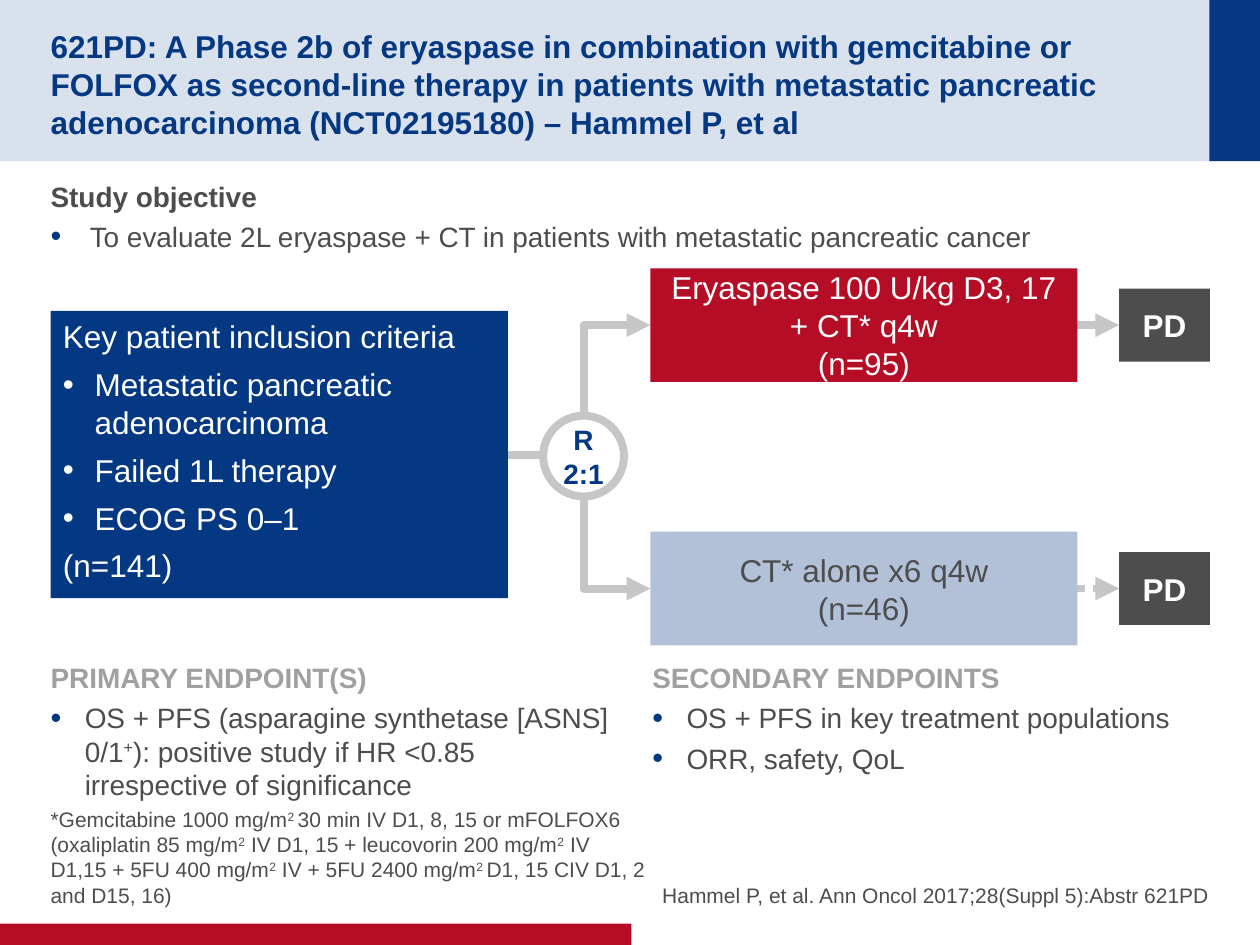
from dataclasses import dataclass

from lxml.etree import SubElement
from pptx import Presentation
from pptx.dml.color import RGBColor
from pptx.enum.dml import MSO_LINE
from pptx.enum.shapes import MSO_CONNECTOR as Connector, MSO_SHAPE as Shape
from pptx.enum.text import MSO_ANCHOR as Anchor, MSO_AUTO_SIZE as AutoSize, PP_ALIGN as Align
from pptx.oxml.ns import qn
from pptx.util import Cm, Pt


@dataclass(frozen=True)
class Theme:
    font: str = "Arial"
    navy: str = "043882"
    red: str = "B60D27"
    pale_blue: str = "B2C0D8"
    dark: str = "4D4D4D"
    heading: str = "A0A0A0"
    line: str = "C6C6C6"
    white: str = "FFFFFF"
    large: int = 18
    body: int = 16
    small: int = 12
    line_width: float = 4.5


@dataclass(frozen=True)
class Box:
    """A region in centimetres."""
    x: float
    y: float
    w: float
    h: float

    def lengths(self):
        return Cm(self.x), Cm(self.y), Cm(self.w), Cm(self.h)

    def inner(self, x, y, w, h):
        return Box(self.x + x, self.y + y, w, h)


THEME = Theme()
SLIDE = Box(0, 0, 25.4, 19.05)
MARGIN = 1.02
RIGHT_COLUMN = 12.9
CONTENT_WIDTH = 23.36


def set_frame(shape, insets=(0, 0, 0, 0), anchor=Anchor.TOP, wrap=True):
    frame = shape.text_frame
    frame.auto_size = AutoSize.NONE
    frame.word_wrap = wrap
    frame.vertical_anchor = anchor
    frame.margin_left, frame.margin_top, frame.margin_right, frame.margin_bottom = map(Cm, insets)
    return frame


def set_bullet(paragraph, indent, color):
    properties = paragraph._p.get_or_add_pPr()
    properties.set("marL", str(Cm(indent)))
    properties.set("indent", str(-Cm(indent)))
    if not indent:
        SubElement(properties, qn("a:buNone"))
        return
    if color:
        SubElement(SubElement(properties, qn("a:buClr")), qn("a:srgbClr"), val=color)
        SubElement(properties, qn("a:buSzPct"), val="110000")
    SubElement(properties, qn("a:buFont"), typeface=THEME.font)
    SubElement(properties, qn("a:buChar"), char="•")


def write(frame, text, size, color, bold=False, align=Align.LEFT, after=0, indent=0, bullet=None):
    """Add one paragraph; text between ^ marks is superscript."""
    paragraph = frame.paragraphs[0] if not frame.text else frame.add_paragraph()
    paragraph.alignment = align
    paragraph.space_before, paragraph.space_after = Pt(0), Pt(after)
    set_bullet(paragraph, indent, bullet)
    for number, part in enumerate(text.split("^")):
        run = paragraph.add_run()
        run.text = part
        font = run.font
        font.name, font.size, font.bold = THEME.font, Pt(size), bold
        font.color.rgb = RGBColor.from_string(color)
        if number % 2:
            run._r.get_or_add_rPr().set("baseline", "30000")


def add_block(slide, box, fill, kind=Shape.RECTANGLE):
    shape = slide.shapes.add_shape(kind, *box.lengths())
    shape.shadow.inherit = False
    shape.fill.solid()
    shape.fill.fore_color.rgb = RGBColor.from_string(fill)
    shape.line.fill.background()
    return shape


def add_label(slide, box, lines, fill, color, bold=False):
    frame = set_frame(add_block(slide, box, fill), (0.25, 0, 0.25, 0), Anchor.MIDDLE)
    for line in lines:
        write(frame, line, THEME.large, color, bold, Align.CENTER)


def style_connector(connector, arrow=True, dash=None):
    connector.line.color.rgb = RGBColor.from_string(THEME.line)
    connector.line.width = Pt(THEME.line_width)
    if dash:
        connector.line.dash_style = dash
    properties = connector._element.spPr
    if arrow:
        SubElement(properties.find(qn("a:ln")), qn("a:tailEnd"), type="triangle")
    SubElement(properties, qn("a:effectLst"))


def add_line(slide, x1, x2, y, **style):
    connector = slide.shapes.add_connector(Connector.STRAIGHT, Cm(x1), Cm(y), Cm(x2), Cm(y))
    style_connector(connector, **style)


def add_elbow(slide, x1, y1, x2, y2):
    """Go vertically from the start, then right to the end."""
    half_w, half_h = abs(y2 - y1) / 2, (x2 - x1) / 2
    x, y = (x1 + x2) / 2, (y1 + y2) / 2
    upward = y2 < y1
    if upward:
        half_h = -half_h
    connector = slide.shapes.add_connector(
        Connector.ELBOW, Cm(x + half_w), Cm(y - half_h), Cm(x - half_w), Cm(y + half_h))
    properties = connector._element.spPr
    properties.find(qn("a:prstGeom")).set("prst", "bentConnector2")
    properties.find(qn("a:xfrm")).set("rot", str((90 if upward else 270) * 60000))
    style_connector(connector)


def add_backdrop(slide, box):
    band = add_block(slide, box.inner(0, 0, box.w, 3.25), THEME.navy)
    color = band.fill._xPr.find(qn("a:solidFill"))[0]
    SubElement(color, qn("a:alpha"), val="15000")
    corner = add_block(slide, box.inner(24.38, 0, 1.02, 3.25), THEME.navy)
    strip = add_block(slide, box.inner(0, 18.62, 12.73, 0.43), THEME.red)
    tree = band.element.getparent()
    for position, shape in enumerate((band, corner, strip), start=2):
        tree.insert(position, shape.element)


def place(shape, box):
    shape.left, shape.top, shape.width, shape.height = box.lengths()


def fill_title(shape, box):
    place(shape, box)
    frame = set_frame(shape, (0, 0.13, 0, 0), Anchor.MIDDLE)
    write(frame, "621PD: A Phase 2b of eryaspase in combination with gemcitabine or FOLFOX as "
          "second-line therapy in patients with metastatic pancreatic adenocarcinoma "
          "(NCT02195180) – Hammel P, et al", THEME.large, THEME.navy, True)


def fill_objective(shape, box):
    place(shape, box)
    frame = set_frame(shape, (0, 0.13, 0, 0.13))
    write(frame, "Study objective", THEME.body, THEME.dark, True, after=4)
    write(frame, "To evaluate 2L eryaspase + CT in patients with metastatic pancreatic cancer",
          THEME.body, THEME.dark, after=4, indent=0.79, bullet=THEME.navy)


def add_criteria(slide, box):
    frame = set_frame(add_block(slide, box, THEME.navy), (0.25, 0.13, 0.25, 0.13))
    for text, indent in (("Key patient inclusion criteria", 0),
                         ("Metastatic pancreatic adenocarcinoma", 0.64),
                         ("Failed 1L therapy", 0.64), ("ECOG PS 0–1", 0.64), ("(n=141)", 0)):
        write(frame, text, THEME.large, THEME.white, after=5.7, indent=indent)


def add_trial_flow(slide, box):
    criteria = box.inner(0, 0.86, 9.22, 5.79)
    circle = box.inner(9.93, 2.97, 1.63, 1.63)
    center_x = circle.x + circle.w / 2
    add_line(slide, criteria.x + criteria.w, circle.x, criteria.y + criteria.h / 2, arrow=False)
    add_criteria(slide, criteria)

    arms = ((["Eryaspase 100 U/kg D3, 17 + CT* q4w", "(n=95)"], THEME.red, THEME.white, None),
            (["CT* alone x6 q4w", "(n=46)"], THEME.pale_blue, THEME.dark, MSO_LINE.ROUND_DOT))
    for row, (lines, fill, color, dash) in enumerate(arms):
        arm = box.inner(12.09, row * 5.31, 8.61, 2.29)
        outcome = box.inner(21.54, row * 5.31 + 0.41, 1.83, 1.47)
        middle = arm.y + arm.h / 2
        add_elbow(slide, center_x, circle.y + row * circle.h, arm.x, middle)
        add_line(slide, arm.x + arm.w, outcome.x, middle, dash=dash)
        add_label(slide, arm, lines, fill, color)
        add_label(slide, outcome, ["PD"], THEME.dark, THEME.white, True)

    node = add_block(slide, circle, THEME.white, Shape.OVAL)
    node.line.color.rgb = RGBColor.from_string(THEME.line)
    node.line.width = Pt(THEME.line_width)
    frame = set_frame(node, anchor=Anchor.MIDDLE, wrap=False)
    for text in ("R", "2:1"):
        write(frame, text, THEME.body, THEME.navy, True, Align.CENTER)


def add_endpoints(slide, box, heading, items, inset=0):
    frame = set_frame(slide.shapes.add_textbox(*box.lengths()), (inset, 0.13, inset, 0.13))
    write(frame, heading, THEME.body, THEME.heading, True, after=4)
    for item in items:
        write(frame, item, THEME.body, THEME.dark, after=4, indent=0.69, bullet=THEME.navy)


def add_footnote(slide, box, text, align=Align.LEFT):
    frame = set_frame(slide.shapes.add_textbox(*box.lengths()), anchor=Anchor.BOTTOM)
    write(frame, text, THEME.small, THEME.dark, align=align, after=4)


def main():
    presentation = Presentation()
    presentation.slide_width, presentation.slide_height = Cm(SLIDE.w), Cm(SLIDE.h)
    slide = presentation.slides.add_slide(presentation.slide_layouts[1])
    add_backdrop(slide, SLIDE)
    fill_title(slide.shapes.title, Box(MARGIN, 0.51, 22.89, 2.24))
    fill_objective(slide.placeholders[1], Box(MARGIN, 3.48, CONTENT_WIDTH, 13.18))
    add_trial_flow(slide, Box(MARGIN, 5.41, CONTENT_WIDTH, 7.6))
    add_endpoints(slide, Box(MARGIN, 13.18, 11.48, 2.21), "PRIMARY ENDPOINT(S)", [
        "OS + PFS (asparagine synthetase [ASNS] 0/1^+^): positive study if HR <0.85 "
        "irrespective of significance"])
    add_endpoints(slide, Box(RIGHT_COLUMN, 13.18, 11.48, 2.21), "SECONDARY ENDPOINTS", [
        "OS + PFS in key treatment populations", "ORR, safety, QoL"], inset=0.25)
    add_footnote(slide, Box(MARGIN, 16.94, 12.09, 1.35),
                 "*Gemcitabine 1000 mg/m^2 ^30 min IV D1, 8, 15 or mFOLFOX6 (oxaliplatin 85 mg/m^2^ IV "
                 "D1, 15 + leucovorin 200 mg/m^2^ IV D1,15 + 5FU 400 mg/m^2^ IV + 5FU 2400 mg/m^2 ^"
                 "D1, 15 CIV D1, 2 and D15, 16)")
    add_footnote(slide, Box(RIGHT_COLUMN, 16.94, 11.48, 1.35),
                 "Hammel P, et al. Ann Oncol 2017;28(Suppl 5):Abstr 621PD", Align.RIGHT)
    presentation.save("out.pptx")


if __name__ == "__main__":
    main()
